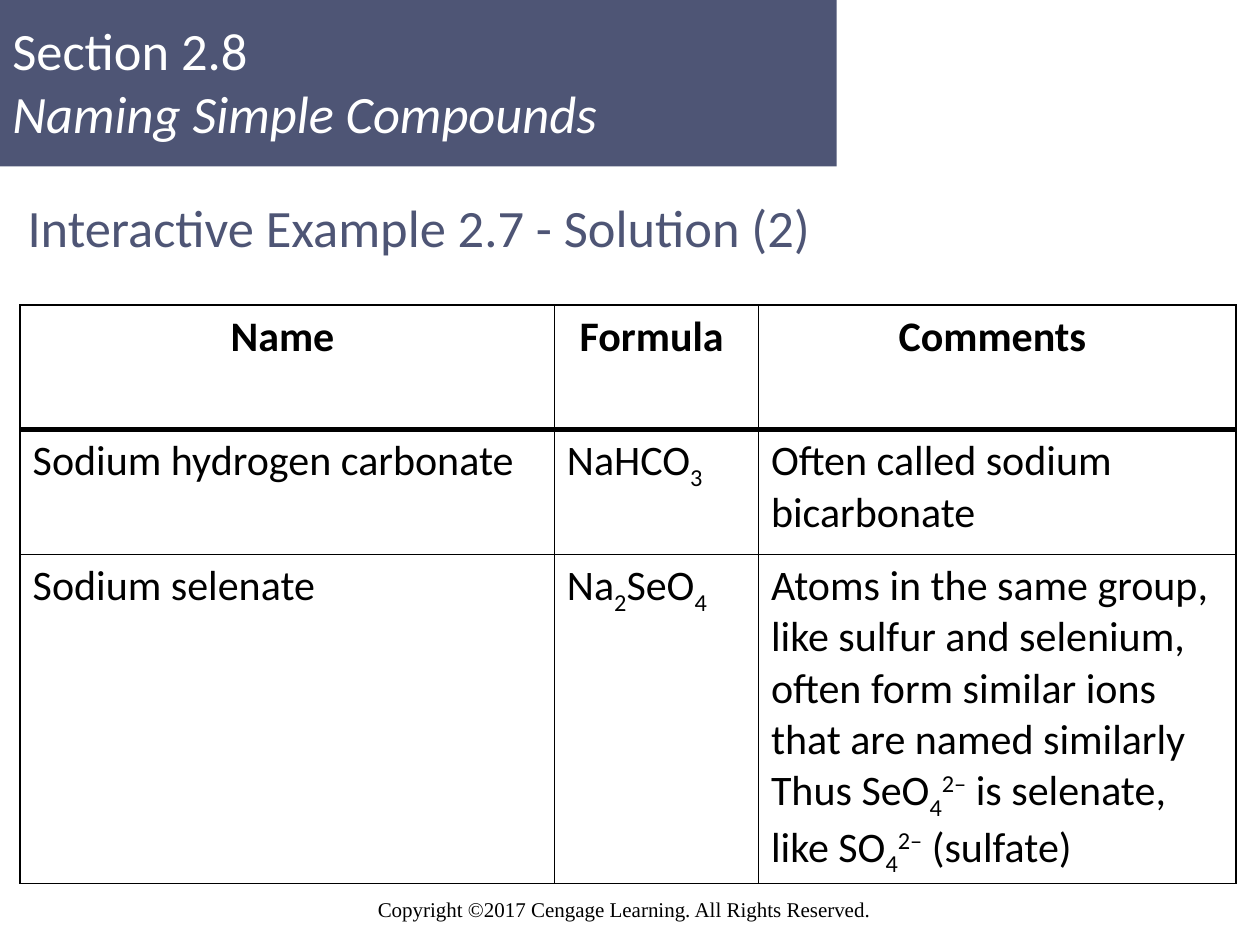
"""Build the slide on naming simple compounds."""
from dataclasses import dataclass
from typing import NamedTuple

from lxml.etree import SubElement
from pptx import Presentation
from pptx.dml.color import RGBColor
from pptx.enum.shapes import MSO_SHAPE
from pptx.enum.text import MSO_ANCHOR, PP_ALIGN
from pptx.oxml.ns import qn
from pptx.util import Inches, Pt

COLUMNS, ROWS = 100, 75
SLIDE_WIDTH, SLIDE_HEIGHT = Inches(10), Inches(7.5)


@dataclass(frozen=True)
class Theme:
    """Colours, fonts and point sizes of the slide."""
    accent: str = "4E5575"
    paper: str = "FFFFFF"
    ink: str = "000000"
    body_font: str = "Calibri"
    legal_font: str = "Times New Roman"
    heading: float = 30
    body: float = 24
    legal: float = 12
    rule: float = 1
    header_rule: float = 3


THEME = Theme()


class Area(NamedTuple):
    """A place on the slide in grid columns and rows."""
    left: float
    top: float
    width: float
    height: float

    def lengths(self) -> tuple:
        """Return left, top, width and height as slide lengths."""
        return across(self.left), down(self.top), across(self.width), down(self.height)


class Style(NamedTuple):
    """The look of a piece of text."""
    size: float
    color: str
    font: str = THEME.body_font
    bold: bool = False


class Span(NamedTuple):
    """A run of text with its slant and baseline shift in percent."""
    text: str
    italic: bool = False
    shift: int = 0


class TextBlock(NamedTuple):
    """A text box with one tuple of spans for each paragraph."""
    area: Area
    style: Style
    paragraphs: list
    anchor: MSO_ANCHOR = MSO_ANCHOR.TOP


def across(columns: float) -> int:
    """Convert grid columns to a length."""
    return round(SLIDE_WIDTH * columns / COLUMNS)


def down(rows: float) -> int:
    """Convert grid rows to a length."""
    return round(SLIDE_HEIGHT * rows / ROWS)


def low(text: str) -> Span:
    """Make a subscript."""
    return Span(text, shift=-25)


def high(text: str) -> Span:
    """Make a superscript."""
    return Span(text, shift=30)


def write(frame, paragraphs: list, style: Style, align=PP_ALIGN.LEFT) -> None:
    """Fill a text frame run by run."""
    for index, spans in enumerate(paragraphs):
        para = frame.add_paragraph() if index else frame.paragraphs[0]
        para.alignment = align
        for span in spans:
            run = para.add_run()
            run.text = span.text
            font = run.font
            font.name, font.size = style.font, Pt(style.size)
            font.bold, font.italic = style.bold, span.italic
            font.color.rgb = RGBColor.from_string(style.color)
            if span.shift:
                run._r.get_or_add_rPr().set("baseline", str(span.shift * 1000))


def draw_banner(page, area: Area) -> None:
    """Draw the coloured block behind the section name."""
    banner = page.shapes.add_shape(MSO_SHAPE.RECTANGLE, *area.lengths())
    banner.shadow.inherit = False
    banner.fill.solid()
    banner.fill.fore_color.rgb = RGBColor.from_string(THEME.accent)
    banner.line.fill.background()


def draw_text(page, block: TextBlock) -> None:
    """Draw one text box."""
    frame = page.shapes.add_textbox(*block.area.lengths()).text_frame
    frame.word_wrap = True
    frame.vertical_anchor = block.anchor
    write(frame, block.paragraphs, block.style)


def draw_border(cell, side: str, points: float) -> None:
    """Add a solid line to one side of a cell."""
    line = SubElement(cell._tc.get_or_add_tcPr(), qn(f"a:ln{side}"), w=str(Pt(points)))
    SubElement(SubElement(line, qn("a:solidFill")), qn("a:srgbClr"), val=THEME.ink)


def draw_table(page, left: float, top: float, widths: list, heights: list, cells: list) -> None:
    """Draw a ruled table whose first row is the header."""
    area = Area(left, top, sum(widths), sum(heights))
    table = page.shapes.add_table(len(heights), len(widths), *area.lengths()).table
    table.first_row = table.horz_banding = False
    for column, width in zip(table.columns, widths):
        column.width = across(width)
    for row, height in zip(table.rows, heights):
        row.height = down(height)
    for row_index, contents in enumerate(cells):
        header = row_index == 0
        style = Style(THEME.body, THEME.ink, bold=header)
        align = PP_ALIGN.CENTER if header else PP_ALIGN.LEFT
        for column_index, paragraphs in enumerate(contents):
            cell = table.cell(row_index, column_index)
            rules = {"L": THEME.rule, "R": THEME.rule,
                     "T": THEME.header_rule if row_index == 1 else THEME.rule,
                     "B": THEME.header_rule if header else THEME.rule}
            for side, points in rules.items():
                draw_border(cell, side, points)
            cell.fill.solid()
            cell.fill.fore_color.rgb = RGBColor.from_string(THEME.paper)
            write(cell.text_frame, paragraphs, style, align)


TEXTS = [
    TextBlock(Area(0, 0, 80.1, 12.8), Style(THEME.heading, THEME.paper),
              [(Span("Section 2.8"),), (Span("Naming Simple Compounds", italic=True),)],
              MSO_ANCHOR.MIDDLE),
    TextBlock(Area(29, 70.7, 41.7, 3), Style(THEME.legal, THEME.ink, THEME.legal_font),
              [(Span("Copyright ©2017 Cengage Learning. All Rights Reserved."),)]),
    TextBlock(Area(1.2, 14.2, 96.8, 7.6), Style(THEME.heading, THEME.accent),
              [(Span("Interactive Example 2.7 - Solution (2)"),)], MSO_ANCHOR.MIDDLE),
]

COMPOUNDS = [
    [[(Span(title),)] for title in ("Name ", "Formula ", "Comments ")],
    [[(Span("Sodium hydrogen carbonate"),)],
     [(Span("NaHCO"), low("3"))],
     [(Span("Often called sodium bicarbonate"),)]],
    [[(Span("Sodium selenate"),)],
     [(Span("Na"), low("2"), Span("SeO"), low("4"))],
     [(Span("Atoms in the same group, like sulfur and selenium, "
            "often form similar ions that are named similarly"),),
      (Span("Thus SeO"), low("4"), high("2–"), Span(" is selenate, like SO"),
       low("4"), high("2–"), Span(" (sulfate)"))]],
]


def main() -> None:
    """Build and save the deck."""
    deck = Presentation()
    deck.slide_width, deck.slide_height = SLIDE_WIDTH, SLIDE_HEIGHT
    page = deck.slides.add_slide(deck.slide_layouts[6])
    draw_banner(page, Area(0, 0, 66.4, 13.2))
    for block in TEXTS:
        draw_text(page, block)
    draw_table(page, 1.6, 24.2, [42.4, 16.2, 37.9], [9.9, 9.9, 25], COMPOUNDS)
    deck.save("out.pptx")


if __name__ == "__main__":
    main()
